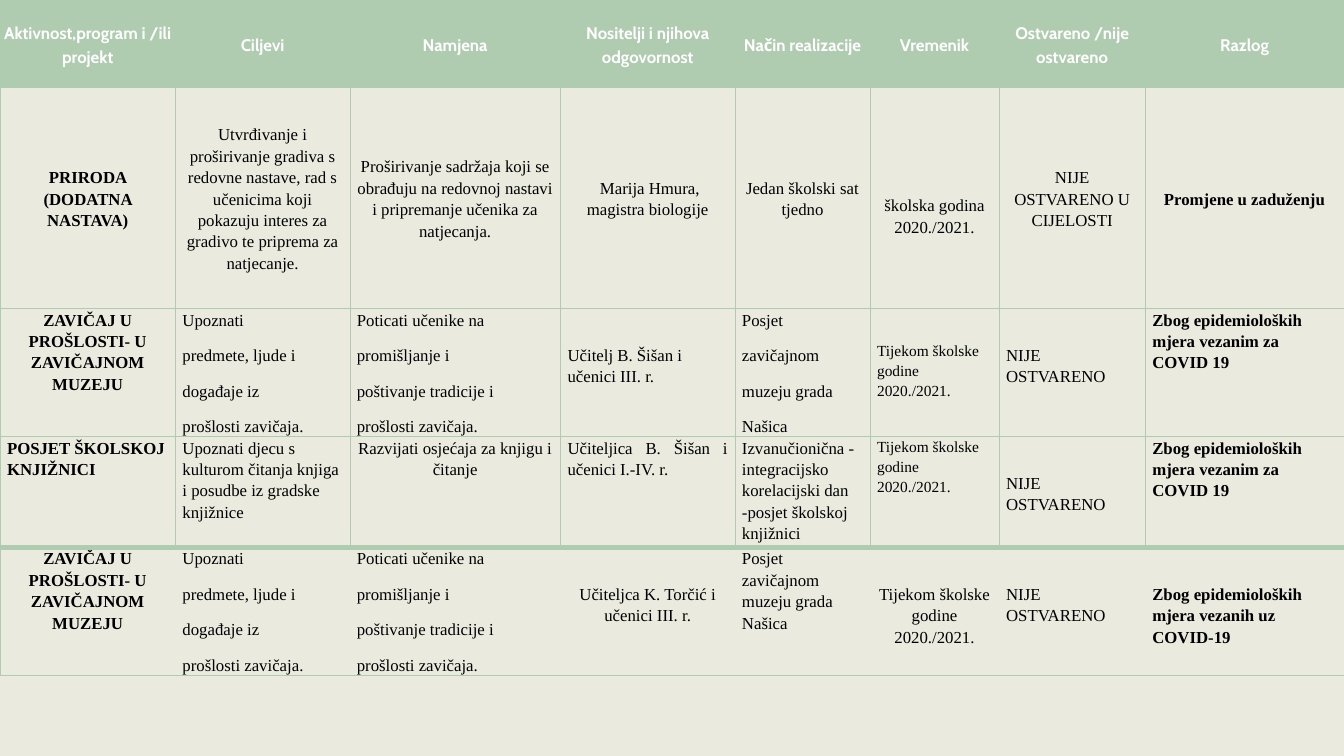
from lxml import etree
from pptx import Presentation
from pptx.dml.color import RGBColor
from pptx.enum.text import MSO_ANCHOR, PP_ALIGN
from pptx.oxml.ns import qn
from pptx.util import Inches, Pt

GREEN, CREAM, WHITE, BLACK = "B0CCB0", "EAEBDE", "FFFFFF", "000000"
COL_WIDTHS = [1.74, 1.73, 2.09, 1.73, 1.34, 1.28, 1.45, 1.97]
ROW_HEIGHTS = [0.87, 2.19, 1.27, 1.1, 1.27]
THIN, THICK = 0.5, 4
LOWERED = 0.35  # top inset of cells whose text starts below the first line

MUSEUM = "ZAVIČAJ U PROŠLOSTI- U ZAVIČAJNOM MUZEJU"
GOALS = "Upoznati\npredmete, ljude i\ndogađaje iz\nprošlosti zavičaja."
PURPOSE = "Poticati učenike na\npromišljanje i\npoštivanje tradicije i\nprošlosti zavičaja."
YEAR = "Tijekom školske godine 2020./2021."
NOT_DONE = "NIJE OSTVARENO"
COVID = "Zbog epidemioloških mjera vezanim za COVID 19"

ROWS = [
    ["Aktivnost,program i /ili projekt", "Ciljevi", "Namjena",
     "Nositelji i njihova odgovornost", "Način realizacije", "Vremenik",
     "Ostvareno /nije ostvareno", "Razlog"],
    ["PRIRODA (DODATNA NASTAVA)",
     "Utvrđivanje i proširivanje gradiva s redovne nastave, rad s učenicima koji "
     "pokazuju interes za gradivo te priprema za natjecanje.",
     "Proširivanje sadržaja koji se obrađuju na redovnoj nastavi i pripremanje "
     "učenika za natjecanja.",
     " Marija Hmura, magistra biologije", "Jedan školski sat tjedno",
     "školska godina 2020./2021.", "NIJE OSTVARENO U CIJELOSTI",
     "Promjene u zaduženju"],
    [MUSEUM, GOALS, PURPOSE, "Učitelj B. Šišan i učenici III. r.",
     "Posjet\nzavičajnom\nmuzeju grada\nNašica", YEAR, NOT_DONE, COVID],
    ["POSJET ŠKOLSKOJ KNJIŽNICI",
     "Upoznati djecu s kulturom čitanja knjiga i posudbe iz gradske knjižnice",
     "Razvijati osjećaja za knjigu i čitanje",
     "Učiteljica B. Šišan i učenici I.-IV. r.",
     "Izvanučionična - integracijsko korelacijski dan -posjet školskoj knjižnici",
     YEAR, NOT_DONE, COVID],
    [MUSEUM, GOALS, PURPOSE, "Učiteljca K. Torčić i učenici III. r.",
     "Posjet zavičajnom muzeju grada Našica", YEAR, NOT_DONE,
     "Zbog epidemioloških mjera vezanih uz COVID-19"],
]
HEADER, LAST = 0, len(ROWS) - 1
MIDDLE_ROWS = (0, 1)
# Exceptions by (row, column)
CENTERED = {(2, 0), (3, 2), (4, 0), (4, 3), (4, 5)}
JUSTIFIED = {(3, 3)}
SMALL = {(2, 5), (3, 5)}
TOP_INSETS = {(1, 5): LOWERED, (2, 3): LOWERED, (2, 5): 0.32, (2, 6): LOWERED,
              (3, 6): LOWERED, (4, 3): LOWERED, (4, 5): LOWERED,
              (4, 6): LOWERED, (4, 7): LOWERED}


def rgb(value):
    return RGBColor.from_string(value)


def set_border(cell, side, width):
    """Draw one cell edge (L, R, T or B); a width of 0 hides it."""
    ln = etree.SubElement(cell._tc.get_or_add_tcPr(), qn(f"a:ln{side}"))
    ln.set("w", str(int(Pt(width))))
    if width:
        fill = etree.SubElement(ln, qn("a:solidFill"))
        etree.SubElement(fill, qn("a:srgbClr")).set("val", GREEN)
    else:
        etree.SubElement(ln, qn("a:noFill"))


def set_borders(cell, row, col):
    open_row = row == LAST
    set_border(cell, "L", 0 if open_row and col > 0 else THIN)
    set_border(cell, "R", 0 if open_row and col < len(COL_WIDTHS) - 1 else THIN)
    set_border(cell, "T", THICK if row == LAST else THIN)
    set_border(cell, "B", THICK if row == LAST - 1 else THIN)


def write_cell(cell, content, row, col):
    header = row == HEADER
    cell.margin_left = cell.margin_right = Inches(0.04 if header else 0.07)
    cell.margin_top = Inches(TOP_INSETS.get((row, col), 0))
    cell.margin_bottom = 0
    cell.vertical_anchor = MSO_ANCHOR.MIDDLE if row in MIDDLE_ROWS else MSO_ANCHOR.TOP
    if row in MIDDLE_ROWS or (row, col) in CENTERED:
        align = PP_ALIGN.CENTER
    else:
        align = PP_ALIGN.JUSTIFY if (row, col) in JUSTIFIED else PP_ALIGN.LEFT
    cell.text_frame.text = content
    for p in cell.text_frame.paragraphs:
        p.alignment = align
        p.line_spacing = 1.15
        p.space_after = Pt(0 if header else 10)
        for r in p.runs:
            r.font.name = "Cabin" if header else "Times New Roman"
            r.font.size = Pt(11 if (row, col) in SMALL else 12)
            r.font.bold = header or col in (0, len(COL_WIDTHS) - 1)
            r.font.color.rgb = rgb(WHITE if header else BLACK)


prs = Presentation()
prs.slide_width, prs.slide_height = Inches(13.33), Inches(7.5)
s = prs.slides.add_slide(prs.slide_layouts[6])
s.background.fill.solid()
s.background.fill.fore_color.rgb = rgb(CREAM)

table = s.shapes.add_table(len(ROWS), len(COL_WIDTHS), 0, 0, Inches(sum(COL_WIDTHS)),
                           Inches(sum(ROW_HEIGHTS))).table
table.first_row = table.horz_banding = False
for column, width in zip(table.columns, COL_WIDTHS):
    column.width = Inches(width)
for table_row, height in zip(table.rows, ROW_HEIGHTS):
    table_row.height = Inches(height)

for row, contents in enumerate(ROWS):
    for col, content in enumerate(contents):
        cell = table.cell(row, col)
        set_borders(cell, row, col)
        cell.fill.solid()
        cell.fill.fore_color.rgb = rgb(GREEN if row == HEADER else CREAM)
        write_cell(cell, content, row, col)

prs.save("out.pptx")
